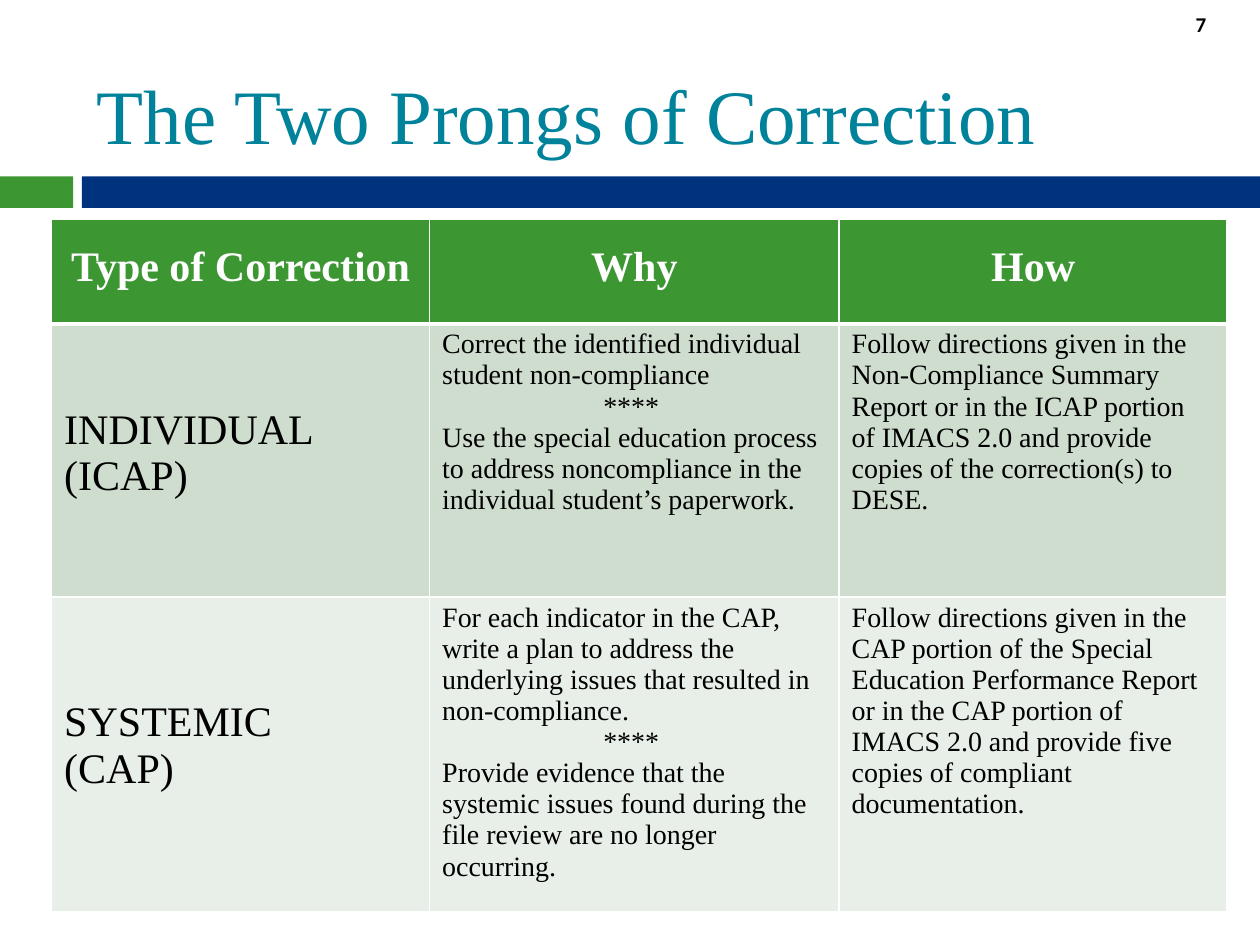
"""Build the slide on the two prongs of correction."""
from dataclasses import dataclass

from lxml.etree import SubElement
from pptx import Presentation
from pptx.dml.color import RGBColor
from pptx.enum.shapes import MSO_SHAPE as Shape
from pptx.enum.text import MSO_ANCHOR as Anchor, PP_ALIGN as Align
from pptx.oxml.ns import qn
from pptx.slide import Slide
from pptx.table import _Cell as Cell
from pptx.text.text import _Paragraph as Paragraph
from pptx.util import Inches, Pt

TEAL = RGBColor(0x00, 0x82, 0x9B)
GREEN = RGBColor(0x3C, 0x97, 0x33)
NAVY = RGBColor(0x00, 0x33, 0x7E)
SAGE = RGBColor(0xCE, 0xDD, 0xCD)
MIST = RGBColor(0xE8, 0xEE, 0xE8)
WHITE = RGBColor(0xFF, 0xFF, 0xFF)
BLACK = RGBColor(0x00, 0x00, 0x00)
SERIF = "Times New Roman"
SEPARATOR = "****"
COLUMN_WIDTHS = (3, 3.25, 3.08)
HEADINGS = ("Type of Correction", "Why", "How")


@dataclass
class Band:
    left: float
    width: float
    color: RGBColor


@dataclass
class Correction:
    label: str
    label_top: float
    why: tuple[str, ...]
    how: str
    height: float
    color: RGBColor


BANDS = (Band(0, 0.58, GREEN), Band(0.65, 9.35, NAVY))
CORRECTIONS = (
    Correction(
        "INDIVIDUAL (ICAP)", 0.66,
        ("Correct the identified individual student non-compliance",
         SEPARATOR,
         "Use the special education process to address noncompliance in the "
         "individual student’s paperwork."),
        "Follow directions given in the Non-Compliance Summary Report or in the "
        "ICAP portion of IMACS 2.0 and provide copies of the correction(s) to DESE.",
        2.17, SAGE),
    Correction(
        "SYSTEMIC (CAP)", 0.81,
        ("For each indicator in the CAP, write a plan to address the underlying "
         "issues that resulted in non-compliance.",
         SEPARATOR,
         "Provide evidence that the systemic issues found during the file review "
         "are no longer occurring."),
        "Follow directions given in the CAP portion of the Special Education "
        "Performance Report or in the CAP portion of IMACS 2.0 and provide five "
        "copies of compliant documentation.",
        2.5, MIST),
)


def style(paragraph: Paragraph, size: float, color: RGBColor, bold: bool = False,
          name: str = SERIF, align: Align = Align.LEFT) -> None:
    """Set the font and alignment of a paragraph."""
    paragraph.alignment = align
    font = paragraph.font
    font.name, font.size, font.bold = name, Pt(size), bold
    font.color.rgb = color


def set_margins(target, left: float, top: float, right: float) -> None:
    """Set the inner margins of a cell or text frame, with none below."""
    target.margin_left, target.margin_right = Inches(left), Inches(right)
    target.margin_top, target.margin_bottom = Inches(top), 0


def add_band(page: Slide, band: Band) -> None:
    """Draw one part of the bar under the title."""
    bar = page.shapes.add_shape(Shape.RECTANGLE, Inches(band.left), Inches(1.4),
                                Inches(band.width), Inches(0.25))
    bar.shadow.inherit = False
    bar.fill.solid()
    bar.fill.fore_color.rgb = band.color
    bar.line.fill.background()


def add_borders(cell: Cell, top: float, bottom: float) -> None:
    """Give a cell white borders ahead of its fill."""
    properties = cell._tc.get_or_add_tcPr()
    for side, width in (("L", 1), ("R", 1), ("T", top), ("B", bottom)):
        line = SubElement(properties, qn(f"a:ln{side}"), w=str(Pt(width)))
        fill = SubElement(line, qn("a:solidFill"))
        SubElement(fill, qn("a:srgbClr"), val=str(WHITE))


def fill_cell(cell: Cell, texts: tuple[str, ...], size: float, color: RGBColor,
              background: RGBColor, borders: tuple[float, float],
              margins: tuple[float, float, float], heading: bool = False) -> None:
    """Write the paragraphs of a cell and format it."""
    add_borders(cell, *borders)
    cell.fill.solid()
    cell.fill.fore_color.rgb = background
    cell.vertical_anchor = Anchor.TOP
    set_margins(cell, *margins)
    cell.text_frame.text = "\n".join(texts)
    for paragraph in cell.text_frame.paragraphs:
        centred = heading or paragraph.text == SEPARATOR
        style(paragraph, size, color, heading,
              align=Align.CENTER if centred else Align.LEFT)


def add_corrections(page: Slide) -> None:
    """Add the table of correction types."""
    heights = (0.83, *(item.height for item in CORRECTIONS))
    table = page.shapes.add_table(
        len(heights), len(COLUMN_WIDTHS), Inches(0.41), Inches(1.74),
        Inches(sum(COLUMN_WIDTHS)), Inches(sum(heights))).table
    for column, width in zip(table.columns, COLUMN_WIDTHS):
        column.width = Inches(width)
    for row, height in zip(table.rows, heights):
        row.height = Inches(height)
    for index, heading in enumerate(HEADINGS):
        fill_cell(table.cell(0, index), (heading,), 24, WHITE, GREEN,
                  (1, 3), (0, 0.2, 0), heading=True)
    for index, item in enumerate(CORRECTIONS, start=1):
        borders = (3 if index == 1 else 1, 1)
        fill_cell(table.cell(index, 0), (item.label,), 24, BLACK, item.color,
                  borders, (0.1, item.label_top, 0.9))
        for column, texts in enumerate((item.why, (item.how,)), start=1):
            fill_cell(table.cell(index, column), texts, 16, BLACK, item.color,
                      borders, (0.1, 0.04, 0.15))


def add_title(page: Slide) -> None:
    """Place and format the title."""
    title = page.shapes.title
    title.left, title.top = Inches(0.76), Inches(0.51)
    title.width, title.height = Inches(7.6), Inches(0.76)
    frame = title.text_frame
    frame.text = "The Two Prongs of Correction"
    frame.vertical_anchor = Anchor.BOTTOM
    set_margins(frame, 0.01, 0.01, 0)
    style(frame.paragraphs[0], 44, TEAL)


def add_page_number(page: Slide) -> None:
    """Add the page number at the top right."""
    box = page.shapes.add_textbox(Inches(9.48), Inches(0.08),
                                  Inches(0.12), Inches(0.23))
    frame = box.text_frame
    frame.word_wrap = True
    frame.text = "7"
    set_margins(frame, 0.01, 0.01, 0)
    style(frame.paragraphs[0], 12, BLACK, bold=True, name="Calibri")


def main() -> None:
    """Build and save the deck."""
    deck = Presentation()
    deck.slide_width, deck.slide_height = Inches(10), Inches(7.5)
    page = deck.slides.add_slide(deck.slide_layouts[5])
    for band in BANDS:
        add_band(page, band)
    add_title(page)
    add_corrections(page)
    add_page_number(page)
    deck.save("out.pptx")


if __name__ == "__main__":
    main()
